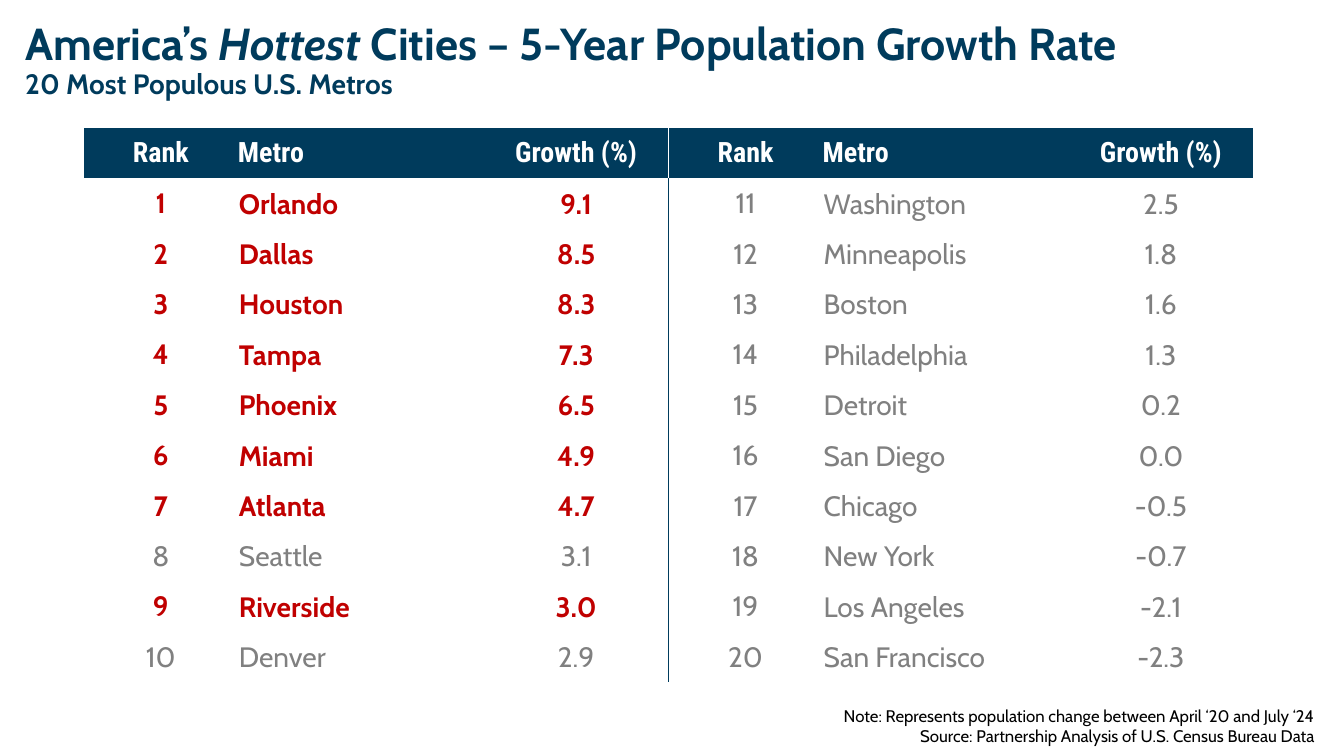
import pptx
import pptx.dml.color
import pptx.enum.text
import pptx.oxml
import pptx.oxml.ns
import pptx.util

COLOURS = {"navy": "003B5C", "red": "C00000", "grey": "808080", "white": "FFFFFF", "black": "000000"}
BODY_FONT = "Cabin"
HEADER_FONT = "Roboto Condensed"
ALIGN = pptx.enum.text.PP_ALIGN
ANCHOR = pptx.enum.text.MSO_ANCHOR

HEADERS = ["Rank", "Metro", "Growth (%)"]
COLUMN_WIDTHS = [153, 244, 183]
COLUMN_ALIGNMENTS = [ALIGN.CENTER, ALIGN.LEFT, ALIGN.CENTER]
ROW_HEIGHT = 50
ROWS_PER_HALF = 10
HIGHLIGHTED_RANKS = {1, 2, 3, 4, 5, 6, 7, 9}
METROS = [
    ("Orlando", "9.1"), ("Dallas", "8.5"), ("Houston", "8.3"), ("Tampa", "7.3"),
    ("Phoenix", "6.5"), ("Miami", "4.9"), ("Atlanta", "4.7"), ("Seattle", "3.1"),
    ("Riverside", "3.0"), ("Denver", "2.9"), ("Washington", "2.5"), ("Minneapolis", "1.8"),
    ("Boston", "1.6"), ("Philadelphia", "1.3"), ("Detroit", "0.2"), ("San Diego", "0.0"),
    ("Chicago", "-0.5"), ("New York", "-0.7"), ("Los Angeles", "-2.1"), ("San Francisco", "-2.3"),
]


def px(length):
    """Turn px, at 100 to the inch, into EMU."""
    return pptx.util.Emu(length * 9144)


def rgb(name):
    return pptx.dml.color.RGBColor.from_string(COLOURS[name])


class SlideBuilder:
    def __init__(self, presentation):
        self.slide = presentation.slides.add_slide(presentation.slide_layouts[5])

    def format_run(self, run, size, colour, bold=False, italic=False, font=BODY_FONT):
        run.font.name = font
        run.font.size = pptx.util.Pt(size)
        run.font.bold = bold
        run.font.italic = italic
        run.font.color.rgb = rgb(colour)

    def title(self, left, top, width, height, lines):
        """Fill the title; each line is a size and a list of (text, italic) parts."""
        shape = self.slide.shapes.title
        shape.left, shape.top, shape.width, shape.height = map(px, (left, top, width, height))
        frame = shape.text_frame
        frame.auto_size = pptx.enum.text.MSO_AUTO_SIZE.NONE
        frame.word_wrap = True
        frame.vertical_anchor = ANCHOR.MIDDLE
        frame.margin_bottom = px(29)
        for index, (size, parts) in enumerate(lines):
            paragraph = frame.add_paragraph() if index else frame.paragraphs[0]
            paragraph.alignment = ALIGN.LEFT
            paragraph.line_spacing = 0.9
            paragraph.space_before = pptx.util.Pt(0)
            for text, italic in parts:
                run = paragraph.add_run()
                run.text = text
                self.format_run(run, size, "navy", bold=True, italic=italic)

    def note(self, left, top, width, height, lines):
        shape = self.slide.shapes.add_textbox(*map(px, (left, top, width, height)))
        frame = shape.text_frame
        frame.word_wrap = True
        frame.text = "\n".join(lines)
        for paragraph in frame.paragraphs:
            paragraph.alignment = ALIGN.RIGHT
            self.format_run(paragraph.runs[0], 12, "black")

    def borders(self, cell, sides):
        """Draw 1 pt lines on the sides given as {side: colour} and clear the rest."""
        properties = cell._tc.get_or_add_tcPr()
        for side in "LRTB":
            if side in sides:
                fill = f'<a:solidFill><a:srgbClr val="{COLOURS[sides[side]]}"/></a:solidFill>'
            else:
                fill = "<a:noFill/>"
            properties.append(pptx.oxml.parse_xml(
                f'<a:ln{side} {pptx.oxml.ns.nsdecls("a")} w="12700">{fill}</a:ln{side}>'))

    def cell(self, cell, text, alignment, margin, fill, sides, **style):
        cell.text = text
        cell.vertical_anchor = ANCHOR.MIDDLE
        cell.margin_left = cell.margin_right = cell.margin_top = px(margin)
        cell.margin_bottom = px(0)
        self.borders(cell, sides)
        cell.fill.solid()
        cell.fill.fore_color.rgb = rgb(fill)
        paragraph = cell.text_frame.paragraphs[0]
        paragraph.alignment = alignment
        self.format_run(paragraph.runs[0], 20, **style)

    def ranking_table(self, left, top):
        row_count = ROWS_PER_HALF + 1
        widths = COLUMN_WIDTHS * 2
        table = self.slide.shapes.add_table(
            row_count, len(widths), px(left), px(top),
            px(sum(widths)), px(row_count * ROW_HEIGHT)).table
        table.first_row = table.horz_banding = False
        for column, width in zip(table.columns, widths):
            column.width = px(width)
        for row in table.rows:
            row.height = px(ROW_HEIGHT)

        for column in range(len(widths)):
            half, field = divmod(column, len(HEADERS))
            divider = {2: "R", 3: "L"}.get(column, "")
            alignment = COLUMN_ALIGNMENTS[field]
            self.cell(table.cell(0, column), HEADERS[field], alignment, 0, "navy",
                      dict.fromkeys(divider, "white"),
                      colour="white", bold=True, font=HEADER_FONT)
            for row in range(1, row_count):
                rank = half * ROWS_PER_HALF + row
                text = (str(rank), *METROS[rank - 1])[field]
                hot = rank in HIGHLIGHTED_RANKS
                self.cell(table.cell(row, column), text, alignment, min(field, 1), "white",
                          dict.fromkeys(divider, "navy"),
                          colour="red" if hot else "grey", bold=hot)


def main():
    presentation = pptx.Presentation()
    presentation.slide_width = px(1333)
    presentation.slide_height = px(750)
    builder = SlideBuilder(presentation)
    builder.ranking_table(83, 127)
    builder.note(667, 695, 647, 50, [
        "Note: Represents population change between April ‘20 and July ‘24",
        "Source: Partnership Analysis of U.S. Census Bureau Data",
    ])
    builder.title(15, 29, 1303, 88, [
        (32, [("America’s ", False), ("Hottest", True),
              (" Cities – 5-Year Population Growth Rate", False)]),
        (20, [("20 Most Populous U.S. Metros", False)]),
    ])
    presentation.save("out.pptx")


if __name__ == "__main__":
    main()
